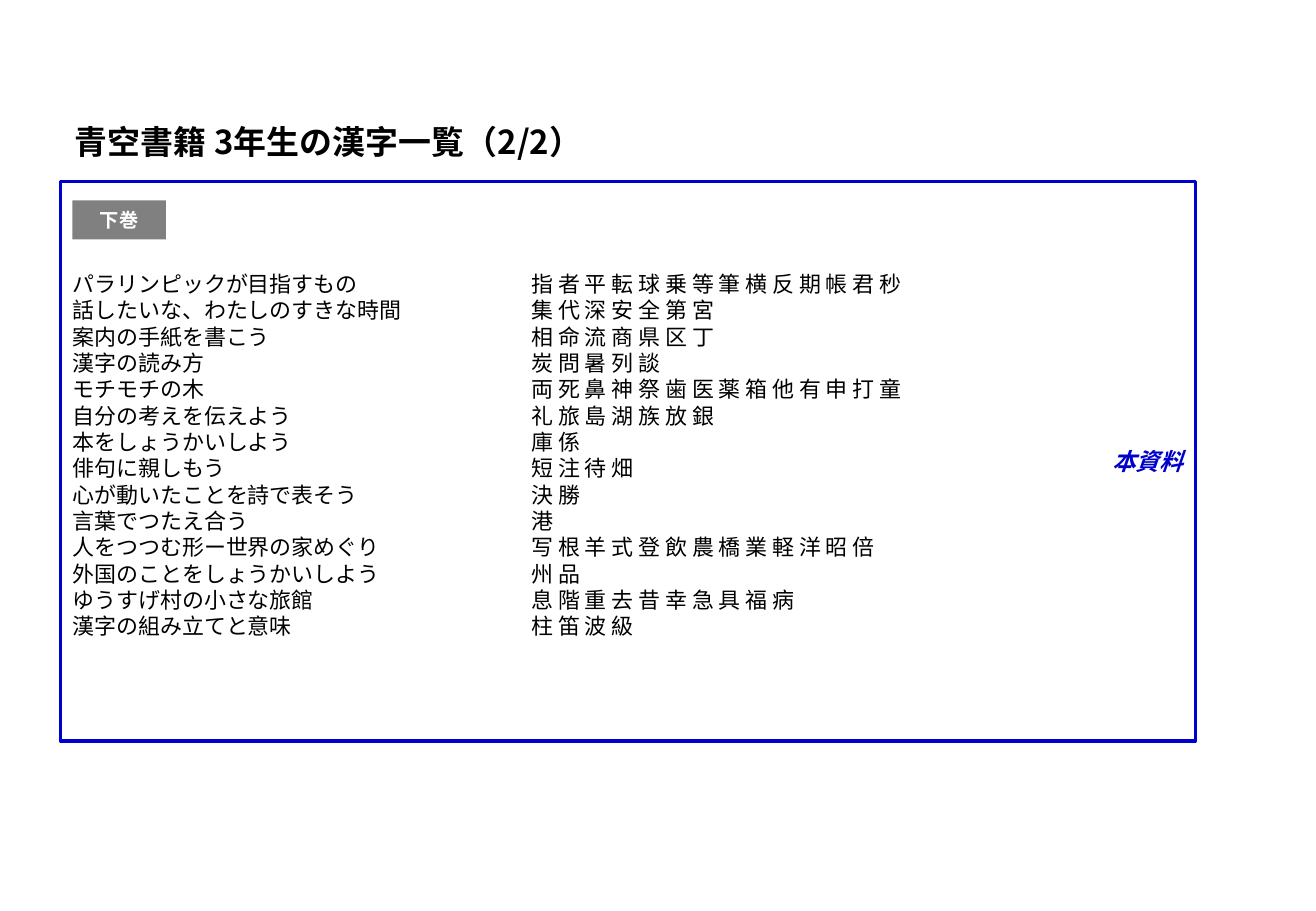
from lxml import etree
from pptx import Presentation
from pptx.dml.color import RGBColor
from pptx.enum.shapes import MSO_SHAPE
from pptx.enum.text import MSO_ANCHOR, MSO_AUTO_SIZE, PP_ALIGN
from pptx.oxml.ns import qn
from pptx.util import Inches, Pt

RECTANGLE = MSO_SHAPE.RECTANGLE
MIDDLE, TOP = MSO_ANCHOR.MIDDLE, MSO_ANCHOR.TOP
FIXED_SIZE = MSO_AUTO_SIZE.NONE
LEFT, CENTER, RIGHT = PP_ALIGN.LEFT, PP_ALIGN.CENTER, PP_ALIGN.RIGHT

WIDTH, HEIGHT = Inches(10.83), Inches(7.5)
COLUMN, ROW = WIDTH / 130, HEIGHT / 90
LIST_COLUMNS = 45.3
FONT = "Noto Sans CJK JP"
COLORS = {"text": "000000", "volume": "808080", "volume_text": "FFFFFF", "frame": "0000CC"}

LESSONS = [
    ("パラリンピックが目指すもの", "指 者 平 転 球 乗 等 筆 横 反 期 帳 君 秒"),
    ("話したいな、わたしのすきな時間", "集 代 深 安 全 第 宮"),
    ("案内の手紙を書こう", "相 命 流 商 県 区 丁"),
    ("漢字の読み方", "炭 問 暑 列 談"),
    ("モチモチの木", "両 死 鼻 神 祭 歯 医 薬 箱 他 有 申 打 童"),
    ("自分の考えを伝えよう", "礼 旅 島 湖 族 放 銀"),
    ("本をしょうかいしよう", "庫 係"),
    ("俳句に親しもう", "短 注 待 畑"),
    ("心が動いたことを詩で表そう", "決 勝"),
    ("言葉でつたえ合う", "港"),
    ("人をつつむ形ー世界の家めぐり", "写 根 羊 式 登 飲 農 橋 業 軽 洋 昭 倍"),
    ("外国のことをしょうかいしよう", "州 品"),
    ("ゆうすげ村の小さな旅館", "息 階 重 去 昔 幸 急 具 福 病"),
    ("漢字の組み立てと意味", "柱 笛 波 級"),
]


def color(name):
    return RGBColor.from_string(COLORS[name])


def grid_box(column, row, columns, rows):
    return [round(length) for length in
            (column * COLUMN, row * ROW, columns * COLUMN, rows * ROW)]


def move(placeholder, *cells):
    (placeholder.left, placeholder.top,
     placeholder.width, placeholder.height) = grid_box(*cells)


def style(paragraph, size, color_name, align, bold=False, italic=False):
    paragraph.alignment = align
    font = paragraph.font
    font.name, font.size = FONT, Pt(size)
    font.bold, font.italic = bold, italic
    font.color.rgb = color(color_name)
    defaults = paragraph._p.pPr.find(qn("a:defRPr"))
    etree.SubElement(defaults, qn("a:ea"), typeface=FONT)


def set_text(shape, text, anchor, *args, **kwargs):
    frame = shape.text_frame
    frame.text = text
    frame.word_wrap = True
    frame.auto_size = FIXED_SIZE
    frame.vertical_anchor = anchor
    for paragraph in frame.paragraphs:
        style(paragraph, *args, **kwargs)


def set_plain_list(paragraph):
    paragraph.space_before = Pt(0)
    paragraph.line_spacing = Pt(15.62)
    properties = paragraph._p.get_or_add_pPr()
    properties.set("marL", "0")
    properties.set("indent", "0")
    properties.find(qn("a:defRPr")).addprevious(etree.Element(qn("a:buNone")))


def add_rectangle(slide, *cells):
    rectangle = slide.shapes.add_shape(RECTANGLE, *grid_box(*cells))
    rectangle.shadow.inherit = False
    return rectangle


def add_lessons(slide):
    for index, entries in enumerate(zip(*LESSONS)):
        entry_list = slide.placeholders[index + 1]
        move(entry_list, 6 + index * LIST_COLUMNS, 26.12, LIST_COLUMNS, 37.9)
        set_text(entry_list, "\n".join(entries), TOP, 13, "text", LEFT)
        for paragraph in entry_list.text_frame.paragraphs:
            set_plain_list(paragraph)


def add_volume(slide):
    volume = add_rectangle(slide, 7.15, 19.8, 9.25, 3.85)
    volume.fill.solid()
    volume.fill.fore_color.rgb = color("volume")
    volume.line.fill.background()
    set_text(volume, "下巻", MIDDLE, 11.4, "volume_text", CENTER, bold=True)


def add_frame(slide):
    frame = add_rectangle(slide, 5.97, 17.93, 112.1, 55.3)
    frame.fill.background()
    frame.line.color.rgb = color("frame")
    frame.line.width = Pt(2)
    set_text(frame, "本資料", MIDDLE, 14, "frame", RIGHT, bold=True, italic=True)


def main():
    presentation = Presentation()
    presentation.slide_width, presentation.slide_height = WIDTH, HEIGHT
    slide = presentation.slides.add_slide(presentation.slide_layouts[3])
    title = slide.shapes.title
    move(title, 6.17, 11.4, 94.5, 5.15)
    set_text(title, "青空書籍 3年生の漢字一覧（2/2）", MIDDLE, 19.5, "text", LEFT, bold=True)
    add_lessons(slide)
    add_volume(slide)
    add_frame(slide)
    presentation.save("out.pptx")


if __name__ == "__main__":
    main()
